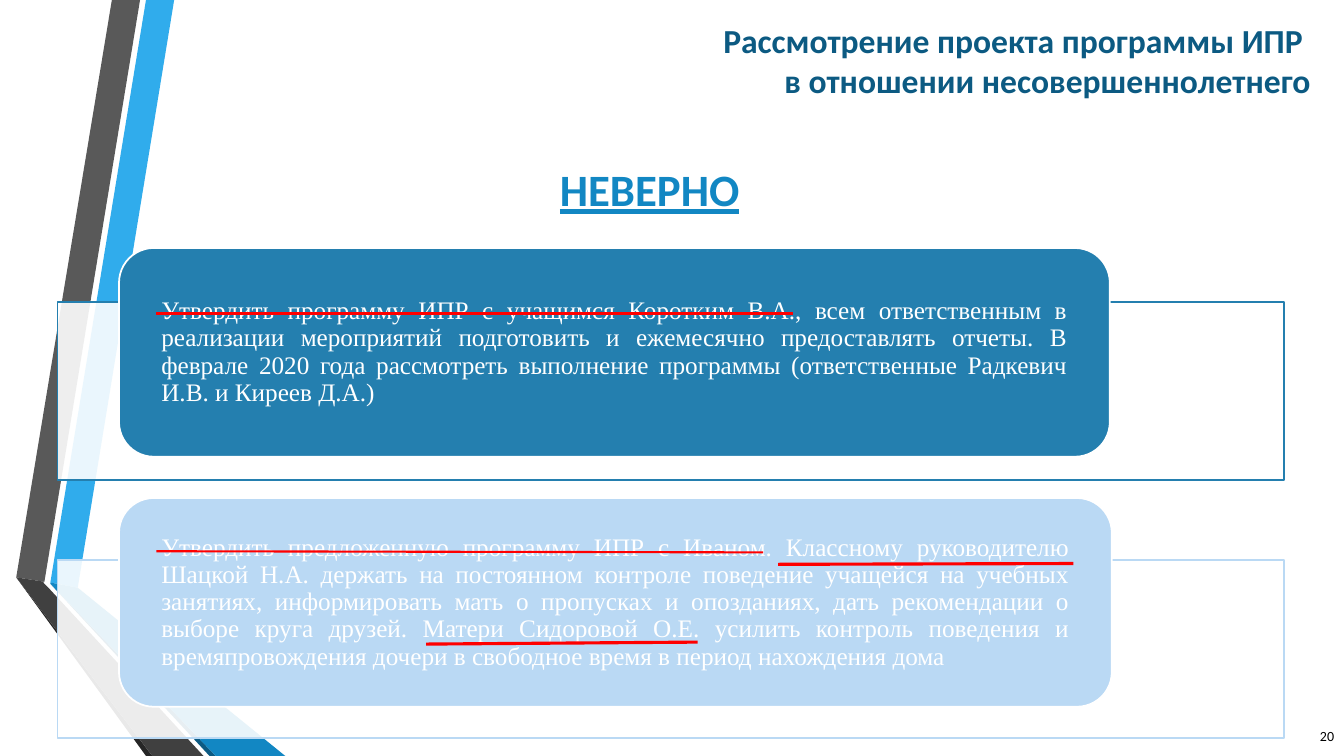
from lxml import etree
from pptx import Presentation, util as u
from pptx.dml.color import RGBColor
from pptx.enum import shapes, text
from pptx.oxml.ns import qn

RIBBONS = [
    ("30ACEC", [(1.27, 14.68), (1.96, 14.81), (4.39, 0), (3.68, 0)]),
    ("595959", [(3.53, 0), (2.82, 0), (0.41, 14.55), (1.12, 14.66)]),
    ("262626", [(0.41, 14.55), (3.68, 19.05), (3.84, 19.05)]),
    ("0C5A82", [(1.27, 14.71), (5.28, 19.05), (5.44, 19.05)]),
    ("1287C3", [(1.27, 14.71), (5.44, 19.05), (7.19, 19.05), (1.96, 14.81), (1.27, 14.68)]),
    ("404040", [(5.13, 19.05), (1.22, 14.81), (1.09, 14.68), (1.12, 14.66),
                (0.41, 14.55), (3.84, 19.05)]),
]

APPROVAL = (
    "Утвердить программу ИПР с учащимся Коротким В.А., всем ответственным в реализации "
    "мероприятий подготовить и ежемесячно предоставлять отчеты. В феврале 2020 года "
    "рассмотреть выполнение программы (ответственные Радкевич И.В. и Киреев Д.А.)"
)
ASSIGNMENT = (
    "Утвердить предложенную программу ИПР с Иваном. Классному руководителю Шацкой Н.А. "
    "держать на постоянном контроле поведение учащейся на учебных занятиях, информировать "
    "мать о пропусках и опозданиях, дать рекомендации о выборе круга друзей. Матери "
    "Сидоровой О.Е. усилить контроль поведения и времяпровождения дочери в свободное время "
    "в период нахождения дома"
)


def color(value):
    """Turn a hex string into a colour."""
    return RGBColor.from_string(value)


def set_font(paragraph, name, size, hue, bold=False, underline=False):
    """Set the font of a whole paragraph."""
    font = paragraph.font
    font.name, font.size, font.bold, font.underline = name, u.Pt(size), bold, underline
    font.color.rgb = color(hue)


def paint(shape, fill, outline=None):
    """Give a shape a flat fill and an optional outline."""
    shape.shadow.inherit = False
    shape.fill.solid()
    shape.fill.fore_color.rgb = color(fill)
    if outline:
        shape.line.color.rgb = color(outline)
        shape.line.width = u.Pt(1.25)
    else:
        shape.line.fill.background()


def draw_ribbons(slide, left, top):
    """Draw the folded ribbons from the given corner."""
    for hue, corners in RIBBONS:
        points = [(u.Cm(left + x), u.Cm(top + y)) for x, y in corners]
        outline = slide.shapes.build_freeform(*points[0], scale=1.0)
        outline.add_line_segments(points[1:], close=True)
        paint(outline.convert_to_shape(), hue)


def draw_mark(slide, left, top, mark):
    """Draw one red pen mark relative to its card."""
    x1, y1, x2, y2, width = mark
    pen = slide.shapes.add_connector(
        shapes.MSO_CONNECTOR.STRAIGHT,
        u.Cm(left + x1), u.Cm(top + y1), u.Cm(left + x2), u.Cm(top + y2))
    pen.line.color.rgb = color("FF0000")
    pen.line.width = u.Pt(width)
    etree.SubElement(pen._element.spPr, qn("a:effectLst"))


def draw_decision(slide, left, top, width, rise, card_width, hue, wording, marks):
    """Draw a frame, the card that rises above it and the marks on the card."""
    frame = slide.shapes.add_shape(
        shapes.MSO_SHAPE.RECTANGLE, u.Cm(left), u.Cm(top), u.Cm(width), u.Cm(4.47))
    paint(frame, "FFFFFF", hue)
    tint = frame._element.spPr.find(qn("a:solidFill"))[0]
    etree.SubElement(tint, qn("a:alpha"), val="90000")

    card_left, card_top = left + 1.55, top - rise
    card = slide.shapes.add_shape(
        shapes.MSO_SHAPE.ROUNDED_RECTANGLE,
        u.Cm(card_left), u.Cm(card_top), u.Cm(card_width), u.Cm(5.26))
    paint(card, hue, "FFFFFF")
    body = card.text_frame
    body.word_wrap = True
    body.vertical_anchor = text.MSO_ANCHOR.MIDDLE
    body.margin_left = body.margin_right = u.Cm(0.81)
    body.margin_top = body.margin_bottom = 0
    paragraph = body.paragraphs[0]
    paragraph.text = wording
    paragraph.alignment = text.PP_ALIGN.JUSTIFY
    paragraph.line_spacing = 0.9
    set_font(paragraph, "Times New Roman", 18, "FFFFFF")

    for mark in marks:
        draw_mark(slide, card_left, card_top, mark)


def draw_label(slide, left, top, width, height, lines, size, hue, align,
               anchor=text.MSO_ANCHOR.TOP, **style):
    """Write lines of text in the given box."""
    label = slide.shapes.add_textbox(u.Cm(left), u.Cm(top), u.Cm(width), u.Cm(height))
    body = label.text_frame
    body.word_wrap = True
    body.vertical_anchor = anchor
    for index, line in enumerate(lines):
        paragraph = body.add_paragraph() if index else body.paragraphs[0]
        paragraph.text = line
        paragraph.alignment = align
        set_font(paragraph, "Calibri", size, hue, **style)


def main():
    """Build the slide and save it."""
    deck = Presentation()
    deck.slide_width, deck.slide_height = u.Cm(33.87), u.Cm(19.05)
    slide = deck.slides.add_slide(deck.slide_layouts[6])
    right = text.PP_ALIGN.RIGHT

    draw_ribbons(slide, 0, 0)
    draw_decision(slide, 1.45, 7.62, 30.91, 1.37, 24.97, "247FAF", APPROVAL,
                  [(0.94, 1.65, 16.99, 1.65, 1.5)])
    draw_decision(slide, 1.45, 14.12, 30.91, 1.57, 25.02, "BAD9F4", ASSIGNMENT,
                  [(0.94, 1.34, 16.23, 1.37, 1.5),
                   (16.61, 1.67, 24.05, 1.65, 2.25),
                   (7.74, 3.68, 14.58, 3.63, 2.25)])
    draw_label(slide, 13.72, 3.96, 5.31, 1.63, ["НЕВЕРНО"], 32, "1287C3",
               text.PP_ALIGN.CENTER, bold=True, underline=True)
    draw_label(slide, 26.25, 18.03, 7.62, 1.02, ["20"], 10, "000000", right,
               text.MSO_ANCHOR.MIDDLE)
    draw_label(slide, 12.55, 0.38, 20.73, 2.31,
               ["Рассмотрение проекта программы ИПР ", "в отношении несовершеннолетнего"],
               24, "0C5A82", right, bold=True)
    deck.save("out.pptx")


if __name__ == "__main__":
    main()
